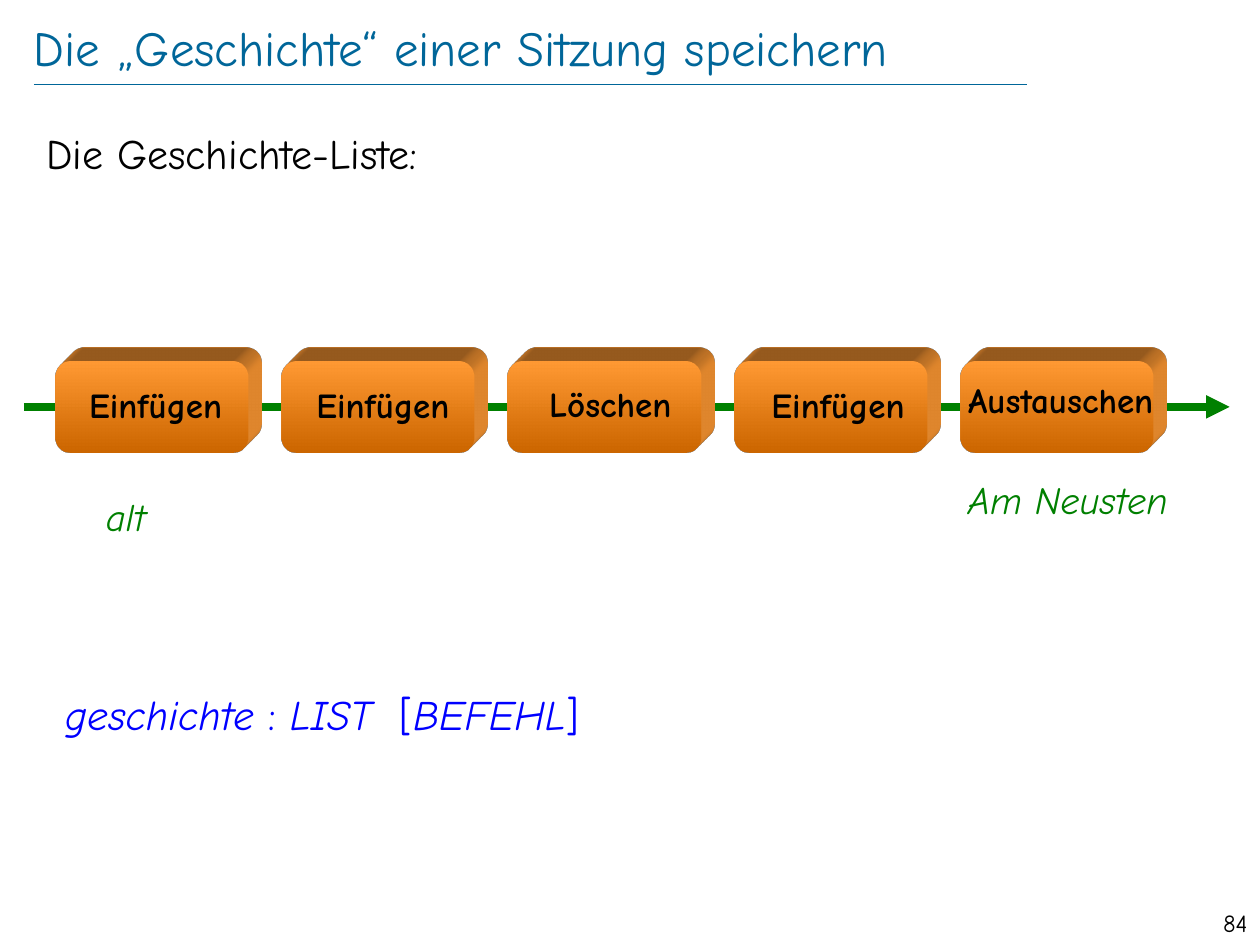
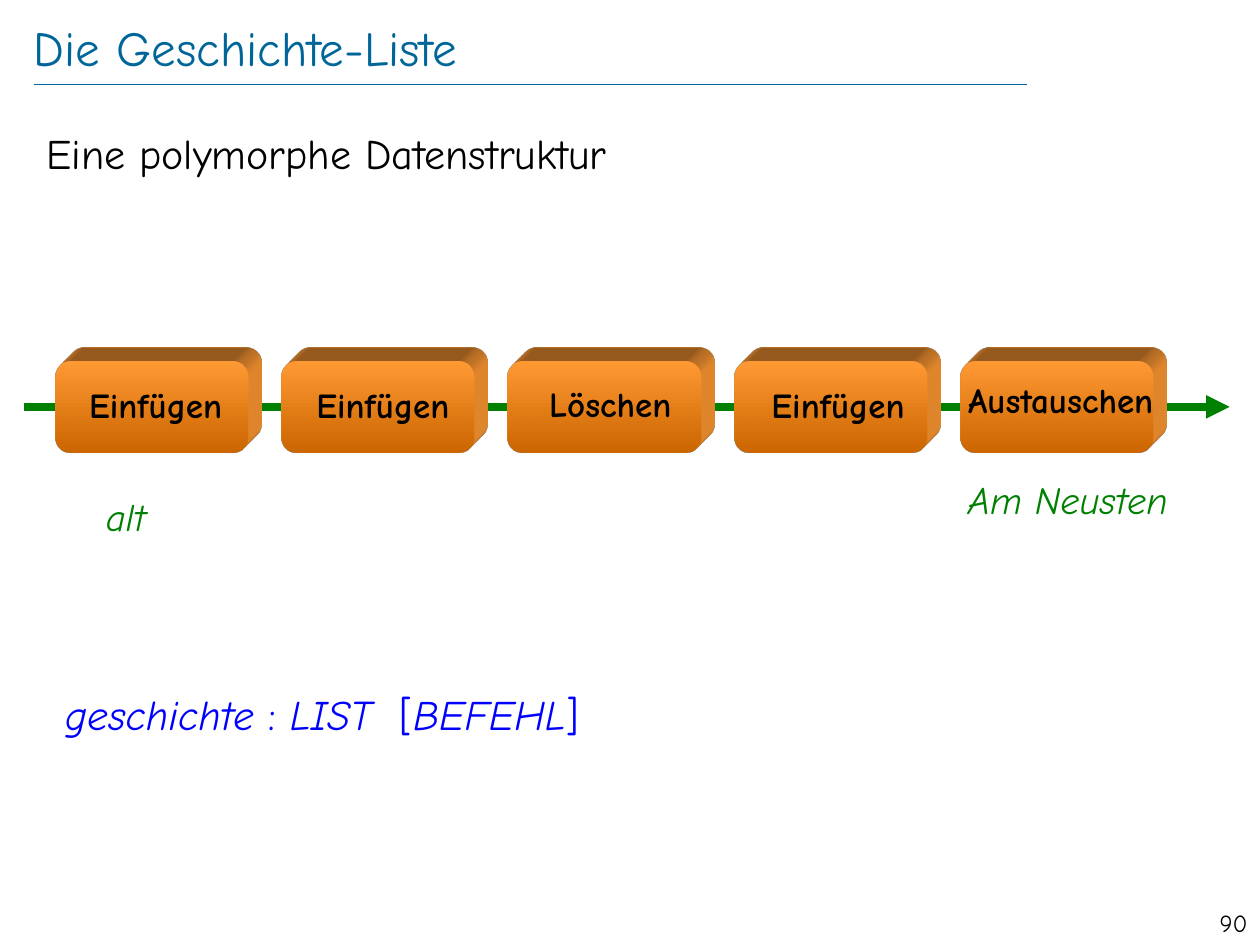
"""Build two slides about the history list of an editing session."""
from dataclasses import dataclass, field

from lxml import etree
from pptx import Presentation
from pptx.dml.color import RGBColor
from pptx.enum import shapes as sh, text as tx
from pptx.oxml import parse_xml
from pptx.oxml.ns import nsdecls, qn
from pptx.util import Pt

FONT = "Comic Neue"
BLUE, INK, CODE, GREEN = "006699", "000000", "0000FF", "008000"
LIGHT, DARK = "FF9933", "CC6600"
LEFT, RIGHT, MID = tx.PP_ALIGN.LEFT, tx.PP_ALIGN.RIGHT, tx.PP_ALIGN.CENTER
AXIS = 232.5
BOX_X, BOX_Y, BOX_W, BOX_H, STEP = 31.7, 206.6, 110, 52, 129.3
DEPTH = f"""<a:root {nsdecls('a')}>
<a:scene3d><a:camera prst="legacyObliqueTopRight"/>
<a:lightRig rig="legacyFlat3" dir="b"/></a:scene3d>
<a:sp3d extrusionH="{Pt(22)}" prstMaterial="legacyMatte">
<a:bevelT w="13500" h="13500" prst="angle"/>
<a:bevelB w="13500" h="13500" prst="angle"/>
<a:extrusionClr><a:srgbClr val="{LIGHT}"/></a:extrusionClr>
</a:sp3d></a:root>"""


@dataclass
class Label:
    """Text at a place, as (words, italic) runs in one format."""
    runs: list
    x: float
    y: float
    w: float
    h: float
    align: int = MID
    form: dict = field(default_factory=dict)


@dataclass
class Page:
    """What differs from slide to slide."""
    title: str
    lead: str
    num: str


PAGES = [
    Page("Die „Geschichte“ einer Sitzung speichern", "Die Geschichte-Liste:", "84"),
    Page("Die Geschichte-Liste", "Eine polymorphe Datenstruktur", "90"),
]
STEPS = [
    ("Einfügen", 31.7, 215.4, 114.5),
    ("Einfügen", 162.7, 215.4, 112.3),
    ("Löschen", 298.8, 215, 100),
    ("Einfügen", 422, 215.4, 113.8),
    ("Austauschen", 537.8, 213, 136.8),
]
NAMES = [
    Label([(word, False)], x, y, w, 32, form={"size": Pt(20), "bold": True})
    for word, x, y, w in STEPS
]
ENDS = [
    Label([(word, True)], x, y, w, 34, form={"size": Pt(22), "color": GREEN})
    for word, x, y, w in [("alt", 23, 278, 98), ("Am Neusten", 532.8, 268.5, 154.8)]
]
DECL = Label(
    [("geschichte ", True), (": ", False), ("LIST  ", True),
     ("[", False), ("BEFEHL", True), ("]", False)],
    30.2, 390.2, 660, 36, LEFT, {"size": Pt(24), "color": CODE})


def hue(code: str) -> RGBColor:
    """Turn a hex string into a colour."""
    return RGBColor.from_string(code)


def style(font, form: dict) -> None:
    """Set font values from a dict."""
    vals = {"name": FONT, "color": INK, **form}
    font.color.rgb = hue(vals.pop("color"))
    for key, val in vals.items():
        setattr(font, key, val)


def place(shape, x: float, y: float, w: float, h: float) -> None:
    """Move and size a shape in points."""
    for key, val in zip(("left", "top", "width", "height"), (x, y, w, h)):
        setattr(shape, key, Pt(val))


def write(slide, label: Label) -> None:
    """Draw a label as a text box."""
    box = slide.shapes.add_textbox(*map(Pt, (label.x, label.y, label.w, label.h)))
    frame = box.text_frame
    frame.word_wrap = True
    para = frame.paragraphs[0]
    para.alignment = label.align
    for words, slant in label.runs:
        run = para.add_run()
        run.text = words
        style(run.font, {**label.form, "italic": slant})


def rule(slide, x: float, y: float, end: float, color: str, width: float):
    """Draw a level line without a shadow."""
    line = slide.shapes.add_connector(
        sh.MSO_CONNECTOR.STRAIGHT, Pt(x), Pt(y), Pt(end), Pt(y))
    line.line.color.rgb = hue(color)
    line.line.width = Pt(width)
    etree.SubElement(line._element.spPr, qn("a:effectLst"))
    return line


def block(slide, x: float) -> None:
    """Draw one raised block with a gradient front."""
    box = slide.shapes.add_shape(
        sh.MSO_SHAPE.ROUNDED_RECTANGLE, Pt(x), Pt(BOX_Y), Pt(BOX_W), Pt(BOX_H))
    box.adjustments[0] = 0.17
    box.shadow.inherit = False
    box.line.fill.background()
    box.fill.gradient()
    box.fill.gradient_angle = 270
    for stop, code, pos in zip(box.fill.gradient_stops, (LIGHT, DARK), (0, 1)):
        stop.color.rgb = hue(code)
        stop.position = pos
    for part in list(parse_xml(DEPTH)):
        box._element.spPr.append(part)


def head(slide, words: str) -> None:
    """Format the title and draw the line below it."""
    title = slide.shapes.title
    place(title, 19.4, 9.4, 625.7, 34.6)
    frame = title.text_frame
    frame.text = words
    form = {"margin_left": 0, "margin_right": 0, "margin_top": 0,
            "margin_bottom": 0, "word_wrap": True,
            "auto_size": tx.MSO_AUTO_SIZE.NONE,
            "vertical_anchor": tx.MSO_ANCHOR.MIDDLE}
    for key, val in form.items():
        setattr(frame, key, val)
    para = frame.paragraphs[0]
    para.alignment = LEFT
    style(para.runs[0].font, {"size": Pt(28), "color": BLUE})
    rule(slide, 19.4, 48.2, 586.8, BLUE, 0.25)


def chain(slide) -> None:
    """Draw the time arrow, its blocks and all their labels."""
    arrow = rule(slide, 13.7, AXIS, 702.7, GREEN, 4.5)
    etree.SubElement(arrow.line._get_or_add_ln(), qn("a:tailEnd"), type="triangle")
    for i in range(len(STEPS)):
        block(slide, BOX_X + i * STEP)
    for label in NAMES + ENDS:
        write(slide, label)


def build(deck, page: Page) -> None:
    """Add one slide."""
    slide = deck.slides.add_slide(deck.slide_layouts[5])
    head(slide, page.title)
    write(slide, Label([(page.num, False)], 680.4, 515.5, 39.6, 17.3, RIGHT,
                       {"size": Pt(14)}))
    write(slide, Label([(page.lead, False)], 19.4, 69.1, 676.8, 444.2, LEFT,
                       {"size": Pt(24)}))
    write(slide, DECL)
    chain(slide)


def main() -> None:
    """Build and save the deck."""
    deck = Presentation()
    deck.slide_width, deck.slide_height = Pt(720), Pt(540)
    for page in PAGES:
        build(deck, page)
    deck.save("out.pptx")


if __name__ == "__main__":
    main()
